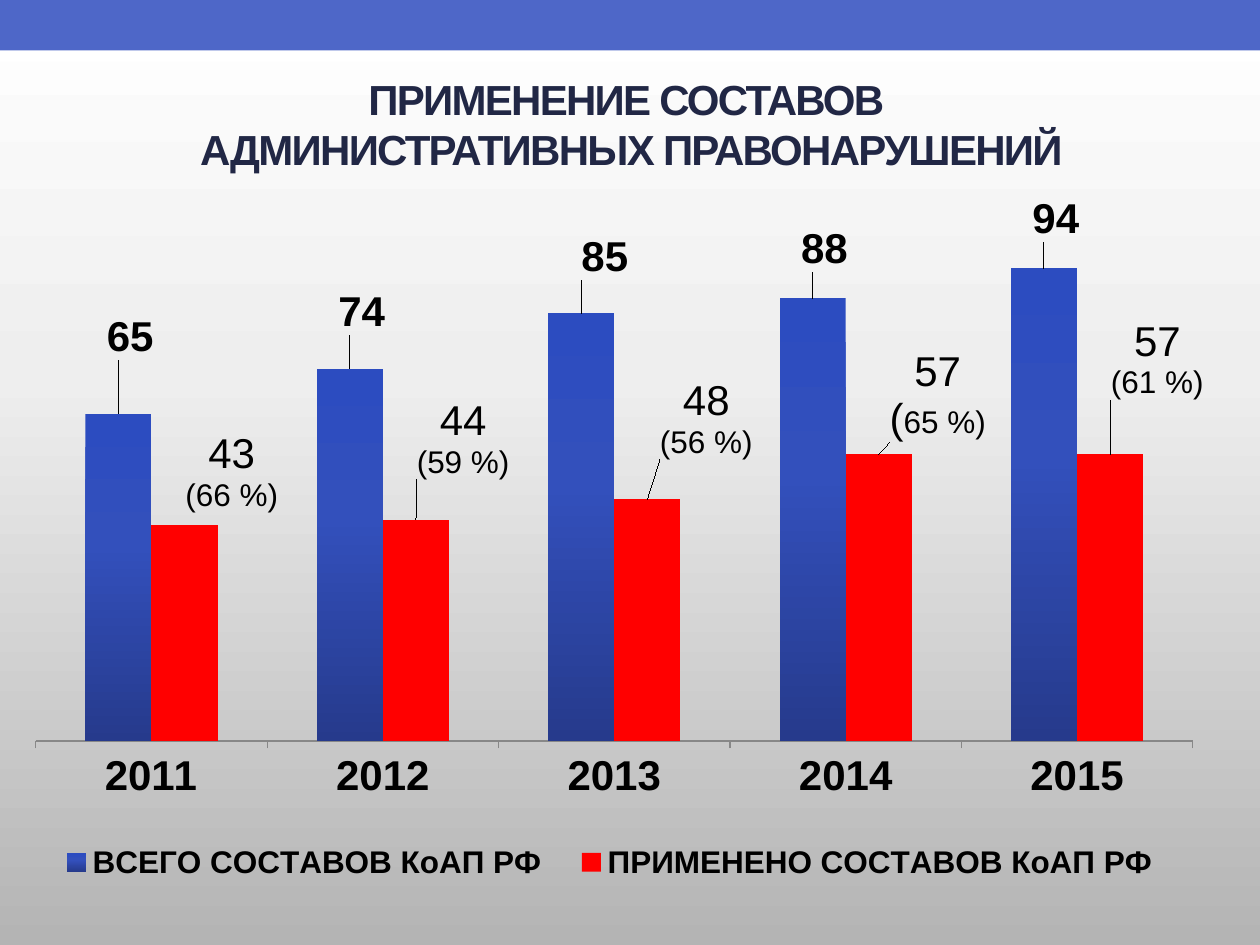
from lxml.etree import SubElement
from pptx import Presentation
from pptx.chart.data import CategoryChartData
from pptx.dml.color import RGBColor
from pptx.enum.chart import XL_CHART_TYPE, XL_LABEL_POSITION, XL_LEGEND_POSITION, XL_TICK_LABEL_POSITION, XL_TICK_MARK
from pptx.enum.shapes import MSO_SHAPE
from pptx.enum.text import MSO_ANCHOR, PP_ALIGN
from pptx.oxml import parse_xml
from pptx.oxml.ns import nsdecls, qn
from pptx.util import Inches, Pt

COLORS = {"band": "4E67C8", "white": "FFFFFF", "title": "212745", "text": "000000",
          "applied": "FF0000", "axis": "888888"}
BACKGROUND_STOPS = [(0, "FFFFFF"), (40, "EEEEEE"), (100, "B4B4B4")]
BAR_STOPS = [(0, "2C4CC0"), (40, "3350BC"), (100, "263A8C")]
YEARS = ["2011", "2012", "2013", "2014", "2015"]
TOTALS = [65, 74, 85, 88, 94]
APPLIED = [43, 44, 48, 57, 57]
SHARES = [66, 59, 56, 65, 61]
TOTAL_OFFSETS = [(0.01, -0.07), (0.01, -0.04), (0.02, -0.04), (0.01, -0.03), (0.01, -0.03)]
APPLIED_OFFSETS = [(0.04, -0.01), (0.04, -0.05), (0.05, -0.05), (0.05, -0.01), (0.04, -0.07)]


def style_font(font, color="text", **values):
    """Set a font from format values."""
    for name, value in {"name": "Arial", **values}.items():
        setattr(font, name, value)
    font.color.rgb = RGBColor.from_string(COLORS[color])


def fill_gradient(fill, element, stops):
    """Fill with a top-to-bottom gradient of several stops."""
    fill.gradient()
    fill.gradient_angle = 270
    stop_list = element.find(".//" + qn("a:gsLst"))
    for stop in list(stop_list):
        stop_list.remove(stop)
    for position, color in stops:
        stop = SubElement(stop_list, qn("a:gs"), pos=str(position * 1000))
        SubElement(stop, qn("a:srgbClr"), val=color)


def set_layout(element, index, **values):
    """Give a chart part a manual layout at a child index."""
    for old in element.findall(qn("c:layout")):
        element.remove(old)
    layout = parse_xml(f"<c:layout {nsdecls('c')}><c:manualLayout/></c:layout>")
    for name, value in values.items():
        SubElement(layout[0], qn(f"c:{name}"), val=str(value))
    element.insert(index, layout)


def add_band(slide, top, height, color):
    """Add a full-width band."""
    shape = slide.shapes.add_shape(MSO_SHAPE.RECTANGLE, 0, Inches(top), Inches(10), Inches(height))
    shape.shadow.inherit = False
    shape.fill.solid()
    shape.fill.fore_color.rgb = RGBColor.from_string(COLORS[color])
    shape.line.fill.background()


def add_title(slide, lines):
    """Add the centred two-line title."""
    box = slide.shapes.add_textbox(Inches(0.51), Inches(0.44), Inches(9), Inches(1.08))
    frame = box.text_frame
    frame.word_wrap = True
    frame.vertical_anchor = MSO_ANCHOR.MIDDLE
    paragraph = frame.paragraphs[0]
    paragraph.alignment = PP_ALIGN.CENTER
    for number, line in enumerate(lines):
        if number:
            paragraph.add_line_break()
        run = paragraph.add_run()
        run.text = line
        style_font(run.font, "title", size=Pt(24), bold=True)
        run.font._element.set("spc", "-100")


def write_share(frame, count, share, opening_size):
    """Write a count with its percentage on the line below."""
    lines = [[(str(count), 24)], [("(", opening_size), (f"{share} %)", 18)]]
    for number, parts in enumerate(lines):
        paragraph = frame.add_paragraph() if number else frame.paragraphs[0]
        for text, size in parts:
            run = paragraph.add_run()
            run.text = text
            style_font(run.font, size=Pt(size), bold=False)


def place_labels(series, offsets):
    """Show values and shift the point labels without leader lines."""
    labels = series.data_labels
    labels.show_value = True
    style_font(labels.font, size=Pt(24), bold=True)
    for point in range(len(offsets)):
        series.points[point].data_label.position = XL_LABEL_POSITION.OUTSIDE_END
    for label, (x, y) in zip(series._element.iter(qn("c:dLbl")), offsets):
        set_layout(label, 1, x=x, y=y)
    for leader in series._element.findall(".//" + qn("c:showLeaderLines")):
        leader.getparent().remove(leader)
    labels._element.append(parse_xml(
        f'<c:extLst {nsdecls("c")}><c:ext uri="{{CE6537A1-D6FC-4f65-9D91-7224C49458BB}}" '
        'xmlns:c15="http://schemas.microsoft.com/office/drawing/2012/chart">'
        '<c15:showLeaderLines val="0"/></c:ext></c:extLst>'))


def style_axes(chart):
    """Show the years and hide the value scale."""
    values = chart.value_axis
    for name, value in {"visible": False, "has_major_gridlines": False,
                        "minimum_scale": 0, "maximum_scale": 103.5}.items():
        setattr(values, name, value)
    years = chart.category_axis
    for name, value in {"major_tick_mark": XL_TICK_MARK.OUTSIDE, "has_major_gridlines": False,
                        "tick_label_position": XL_TICK_LABEL_POSITION.LOW}.items():
        setattr(years, name, value)
    years.format.line.color.rgb = RGBColor.from_string(COLORS["axis"])
    style_font(years.tick_labels.font, size=Pt(24), bold=True)


def add_chart(slide):
    """Add the column chart of total and applied articles."""
    data = CategoryChartData()
    data.categories = YEARS
    data.add_series("ВСЕГО СОСТАВОВ КоАП РФ", TOTALS)
    data.add_series("ПРИМЕНЕНО СОСТАВОВ КоАП РФ", APPLIED)
    chart = slide.shapes.add_chart(XL_CHART_TYPE.COLUMN_CLUSTERED, Inches(0.2), Inches(1.55),
                                   Inches(9.37), Inches(5.57), data).chart
    style_font(chart.font, size=Pt(18))
    chart.has_title = False
    style_axes(chart)
    plot = chart.plots[0]
    for name, value in {"gap_width": 150, "overlap": 0, "vary_by_categories": False}.items():
        setattr(plot, name, value)
    total, applied = plot.series
    fill_gradient(total.format.fill, total._element, BAR_STOPS)
    applied.format.fill.solid()
    applied.format.fill.fore_color.rgb = RGBColor.from_string(COLORS["applied"])
    for point, share in enumerate(SHARES):
        style_font(total.points[point].data_label.font, size=Pt(24), bold=True)
        write_share(applied.points[point].data_label.text_frame, APPLIED[point], share,
                    24 if YEARS[point] == "2014" else 18)
    place_labels(total, TOTAL_OFFSETS)
    place_labels(applied, APPLIED_OFFSETS)
    chart.has_legend = True
    legend = chart.legend
    legend.position = XL_LEGEND_POSITION.RIGHT
    legend.include_in_layout = False
    style_font(legend.font, size=Pt(18), bold=True)
    set_layout(legend._element, 1, xMode="edge", yMode="edge", x=0.01, y=0.91, w=0.97, h=0.08)
    set_layout(chart._chartSpace.find(".//" + qn("c:plotArea")), 0, layoutTarget="inner",
               xMode="edge", yMode="edge", x=0.009, y=0.029, w=0.98, h=0.747)


def main():
    """Build and save the slide."""
    presentation = Presentation()
    presentation.slide_width, presentation.slide_height = Inches(10), Inches(7.5)
    slide = presentation.slides.add_slide(presentation.slide_layouts[6])
    fill_gradient(slide.background.fill, slide.element, BACKGROUND_STOPS)
    add_band(slide, 0.24, 0.25, "white")
    add_band(slide, 0, 0.4, "band")
    add_title(slide, ["ПРИМЕНЕНИЕ СОСТАВОВ ", "АДМИНИСТРАТИВНЫХ ПРАВОНАРУШЕНИЙ"])
    add_chart(slide)
    presentation.save("out.pptx")


if __name__ == "__main__":
    main()
